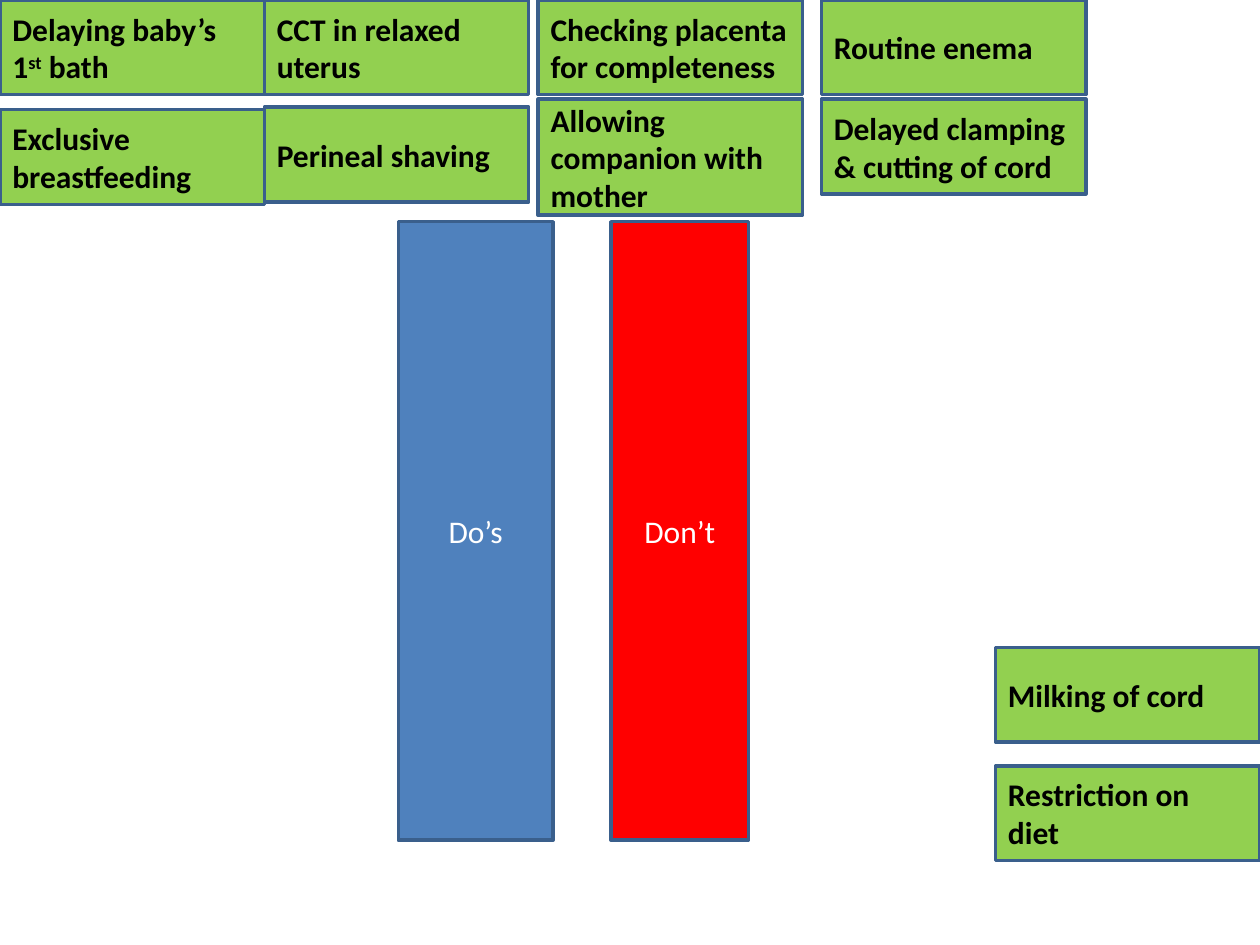
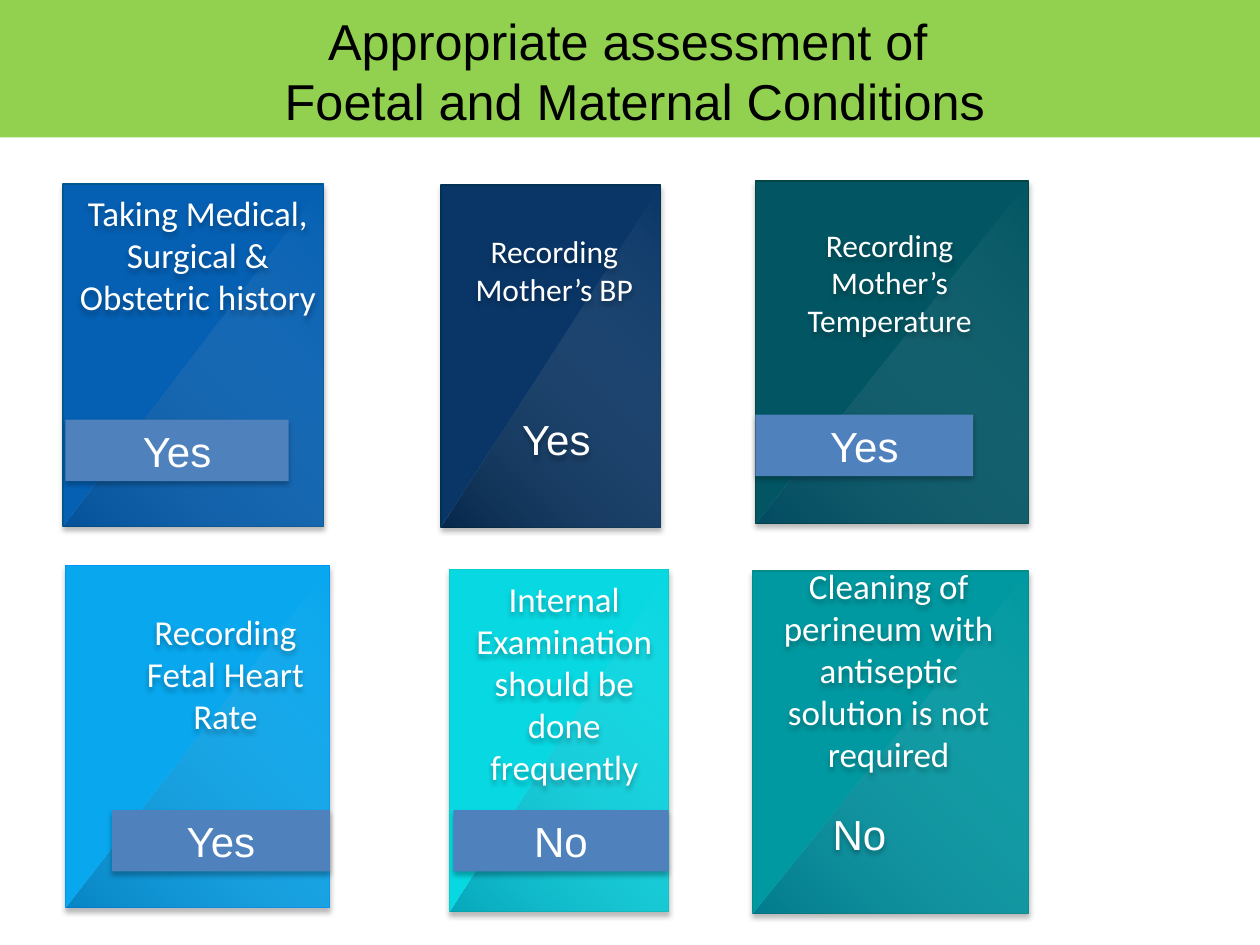
from lxml.etree import SubElement
from pptx import Presentation
from pptx.dml.color import RGBColor
from pptx.enum.shapes import MSO_SHAPE
from pptx.enum.text import MSO_ANCHOR, PP_ALIGN
from pptx.oxml import parse_xml
from pptx.oxml.ns import nsdecls, qn
from pptx.util import Cm, Pt

GREEN, BLUE, RED = "92D050", "4F81BD", "FF0000"
BORDER, WHITE, BLACK = "3A5F8C", "FFFFFF", "000000"
BODY_FONT, TITLE_FONT = "Calibri", "Arial"


def rgb(value):
    return RGBColor.from_string(value)


class Deck:
    def __init__(self):
        self.prs = Presentation()
        self.prs.slide_width, self.prs.slide_height = Cm(25.4), Cm(19.05)
        self.s = None

    def add_slide(self):
        self.s = self.prs.slides.add_slide(self.prs.slide_layouts[6])

    def rect(self, x, y, w, h, fill=None, line=None, line_width=2, shadow=False):
        sp = self.s.shapes.add_shape(MSO_SHAPE.RECTANGLE, Cm(x), Cm(y), Cm(w), Cm(h))
        if fill:
            sp.fill.solid()
            sp.fill.fore_color.rgb = rgb(fill)
        else:
            sp.fill.background()
        if line:
            sp.line.color.rgb = rgb(line)
            sp.line.width = Pt(line_width)
        else:
            sp.line.fill.background()
        sp.shadow.inherit = False
        if shadow:
            self.drop_shadow(sp)
        return sp

    def drop_shadow(self, sp):
        """Cast a soft shadow straight down; an unfilled shape casts it from its text."""
        effects = sp.element.spPr.find(qn("a:effectLst"))
        shadow = SubElement(effects, qn("a:outerShdw"), blurRad=str(Pt(3)),
                            dist=str(Pt(2)), dir="5400000", rotWithShape="0")
        color = SubElement(shadow, qn("a:srgbClr"), val=BLACK)
        SubElement(color, qn("a:alpha"), val="27000")

    def text(self, sp, text, size, font=BODY_FONT, color=WHITE, bold=False,
             align=PP_ALIGN.CENTER, anchor=MSO_ANCHOR.MIDDLE, insets=(0.25, 0.13)):
        """Write text into a shape; a part between carets is raised."""
        tf = sp.text_frame
        tf.word_wrap = True
        tf.vertical_anchor = anchor
        tf.margin_left = tf.margin_right = Cm(insets[0])
        tf.margin_top = tf.margin_bottom = Cm(insets[1])
        p = tf.paragraphs[0]
        p.alignment = align
        p.font.size, p.font.name, p.font.bold = Pt(size), font, bold
        p.font.color.rgb = rgb(color)
        for i, line in enumerate(text.split("\n")):
            if i:
                p.add_line_break()
            for j, part in enumerate(line.split("^")):
                r = p.add_run()
                r.text = part
                r.font.size, r.font.name, r.font.bold = Pt(size), font, bold
                r.font.color.rgb = rgb(color)
                if j % 2:
                    r.font._element.set("baseline", "30000")

    def practice(self, x, y, text, h=1.91):
        sp = self.rect(x, y, 5.33, h, GREEN, BORDER)
        self.text(sp, text, 18, color=BLACK, bold=True, align=PP_ALIGN.LEFT)

    def bar(self, x, w, fill, text):
        self.text(self.rect(x, 4.47, w, 12.47, fill, BORDER), text, 18)

    def title(self, text):
        sp = self.rect(0, 0, 25.6, 2.77, GREEN)
        self.text(sp, text, 28.8, TITLE_FONT, BLACK, anchor=MSO_ANCHOR.BOTTOM)

    def fold(self, x, y, w, h, shade, alpha):
        """Cover the lower right half of a card with a fading triangle."""
        builder = self.s.shapes.build_freeform(Cm(x), Cm(y + h))
        builder.add_line_segments([(Cm(x + w), Cm(y)), (Cm(x + w), Cm(y + h))])
        sp = builder.convert_to_shape()
        sp.line.fill.background()
        sp.shadow.inherit = False
        gradient = parse_xml(
            f'<a:gradFill {nsdecls("a")} rotWithShape="1"><a:gsLst>'
            f'<a:gs pos="0"><a:srgbClr val="{shade}"><a:alpha val="{alpha}000"/></a:srgbClr></a:gs>'
            f'<a:gs pos="100000"><a:srgbClr val="{WHITE}"><a:alpha val="0"/></a:srgbClr></a:gs>'
            '</a:gsLst><a:lin ang="18900000" scaled="0"/></a:gradFill>')
        sp.element.spPr.find(qn("a:custGeom")).addnext(gradient)

    def card(self, x, y, w, fill, line, shade="01315D", alpha=29):
        h = 6.9
        self.rect(x, y, w, h, fill, line, 0.75, shadow=True)
        self.fold(x, y, w, h, shade, alpha)

    def caption(self, box, text, size, font=BODY_FONT, fill=None):
        sp = self.rect(*box, fill, shadow=True)
        self.text(sp, text, size, font, insets=(0.23, 0.1))

    def answer(self, x, y, w, text, fill=BLUE):
        self.caption((x, y, w, 1.24), text, 24, TITLE_FONT, fill)


def dos_and_donts(deck):
    deck.add_slide()
    deck.bar(8.03, 3.12, BLUE, "Do’s")
    deck.bar(12.32, 2.77, RED, "Don’t")
    columns = [
        (0, 2.21, "Delaying baby’s 1^st^ bath", "Exclusive breastfeeding", 1.91),
        (5.33, 2.16, "CCT in relaxed uterus", "Perineal shaving", 1.91),
        (10.85, 2, "Checking placenta for completeness",
         "Allowing companion with mother", 2.34),
        (16.56, 2, "Routine enema", "Delayed clamping & cutting of cord", 1.91),
    ]
    for x, lower_y, upper, lower, lower_h in columns:
        deck.practice(x, lower_y, lower, lower_h)
        deck.practice(x, 0, upper)
    deck.practice(20.07, 13.05, "Milking of cord")
    deck.practice(20.07, 15.44, "Restriction on diet")


def assessment(deck):
    deck.add_slide()
    deck.title("Appropriate assessment of \nFoetal and Maternal Conditions")
    # card, caption box, caption, caption size, answer
    steps = [
        ((1.27, 3.71, 5.26, "0560B3", "01568F"), (1.27, 3.73, 5.44, 2.79),
         "Taking Medical, Surgical & Obstetric history", 20, (1.32, 8.46, 4.5, "Yes")),
        ((8.89, 3.73, 4.42, "093667", "013253", "000C16", 35), (8.89, 4.55, 4.57, 1.78),
         "Recording Mother’s BP", 18, (8.94, 8.23, 4.55, "Yes", None)),
        ((15.23, 3.65, 5.51, "025663", "034543"), (15.65, 4.42, 4.57, 2.54),
         "Recording Mother’s Temperature", 18, (15.23, 8.36, 4.39, "Yes")),
        ((1.32, 11.4, 5.33, "08A7EE", "0195F9"), (2.26, 12.19, 4.57, 2.79),
         "Recording Fetal Heart Rate", 20, (2.26, 16.33, 4.39, "Yes")),
        ((9.06, 11.48, 4.42, "08D8E2", "06CEC9"), (9.09, 11.51, 4.57, 4.5),
         "Internal Examination should be done frequently", 20, (9.14, 16.33, 4.34, "No")),
        ((15.17, 11.51, 5.57, "0199A1", "048C89"), (15.11, 11.25, 5.61, 4.5),
         "Cleaning of perineum with antiseptic solution is not required", 20,
         (15.04, 16.18, 4.57, "No", None)),
    ]
    for card, caption_box, caption, size, answer in steps:
        deck.card(*card)
        deck.caption(caption_box, caption, size)
        deck.answer(*answer)


def main():
    deck = Deck()
    dos_and_donts(deck)
    assessment(deck)
    deck.prs.save("out.pptx")


if __name__ == "__main__":
    main()
